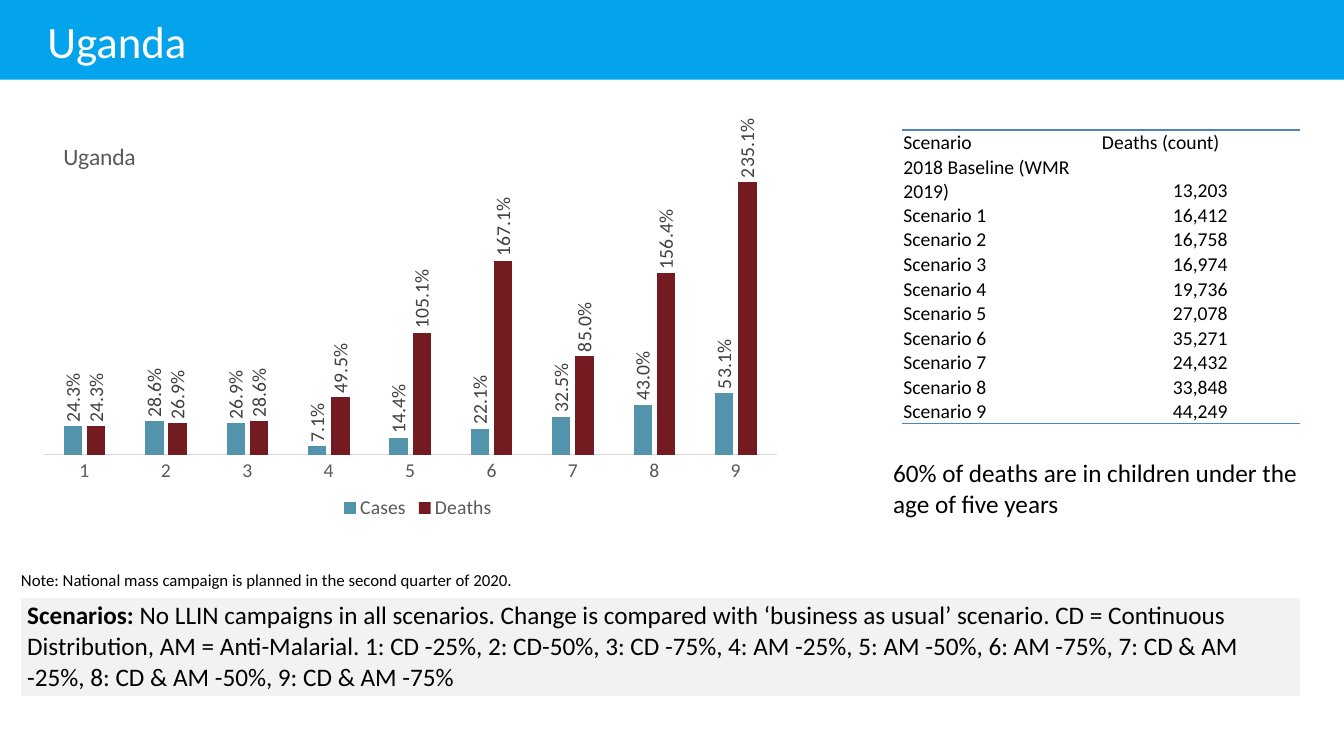
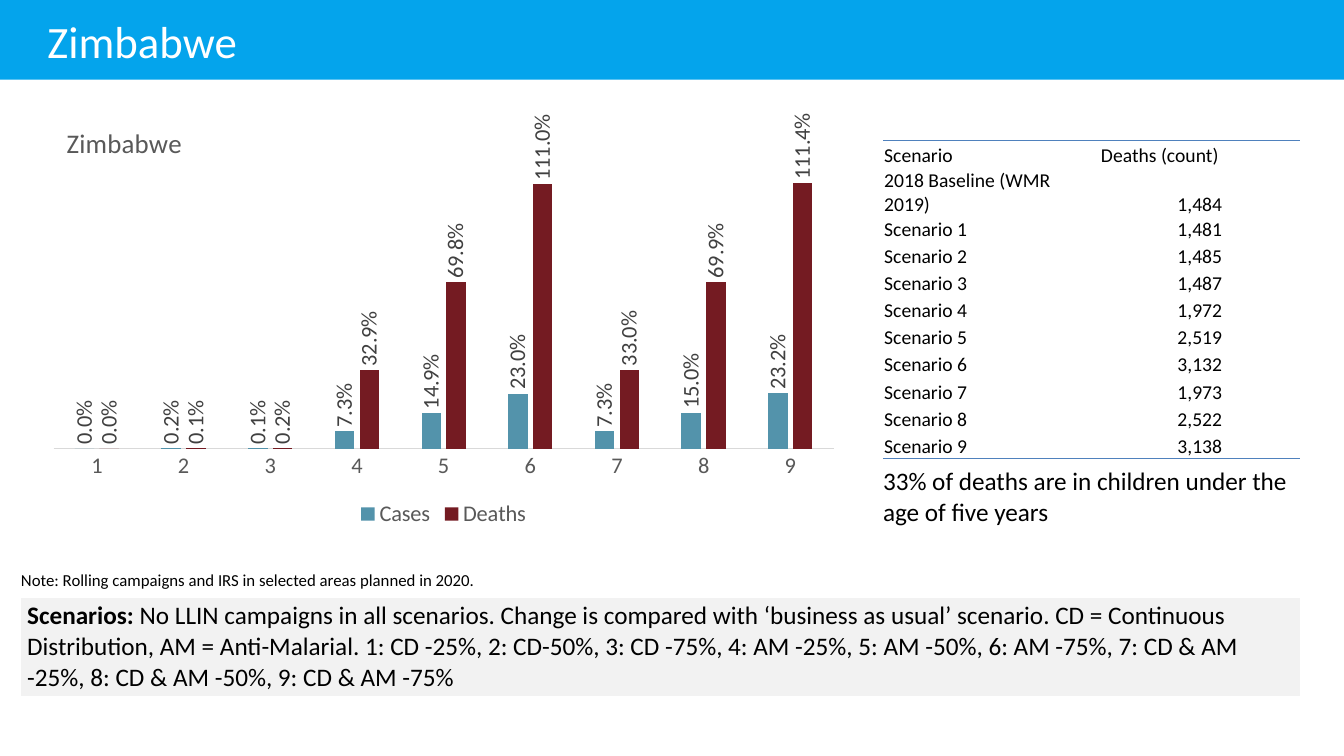
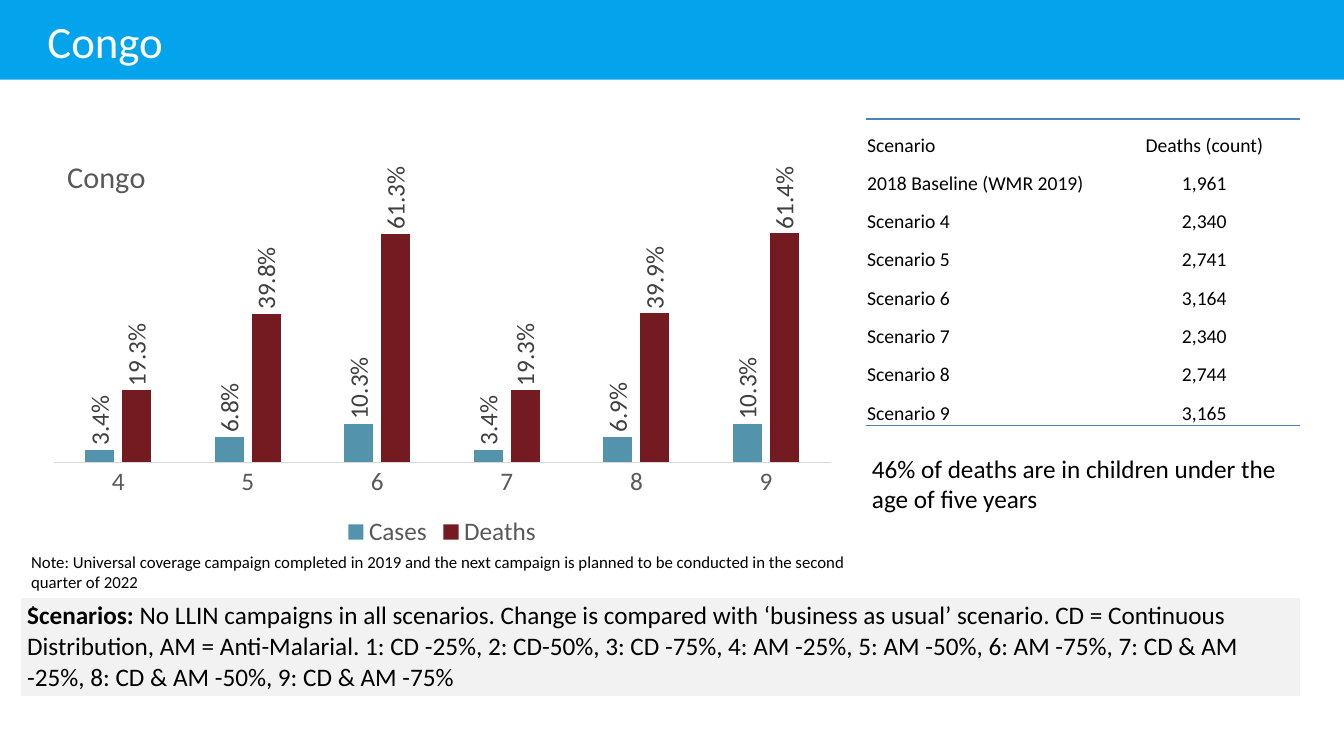
"""Build three country slides comparing malaria scenarios."""
from lxml.etree import SubElement
from pptx import Presentation
from pptx.chart.data import CategoryChartData
from pptx.dml.color import RGBColor
from pptx.enum.chart import XL_CHART_TYPE, XL_LABEL_POSITION, XL_LEGEND_POSITION, XL_TICK_MARK
from pptx.enum.shapes import MSO_SHAPE
from pptx.enum.text import MSO_ANCHOR, PP_ALIGN
from pptx.oxml.ns import qn
from pptx.util import Inches, Pt

BLUE = RGBColor(0x04, 0xA4, 0xEC)
RULE = RGBColor(0x4F, 0x81, 0xBD)
TEAL = RGBColor(0x53, 0x93, 0xAB)
WINE = RGBColor(0x74, 0x1B, 0x22)
PALE = RGBColor(0xF2, 0xF2, 0xF2)
LINE = RGBColor(0xD9, 0xD9, 0xD9)
GREY = RGBColor(0x59, 0x59, 0x59)
DARK = RGBColor(0x40, 0x40, 0x40)
BLACK = RGBColor(0, 0, 0)
WHITE = RGBColor(0xFF, 0xFF, 0xFF)
FONT = "Calibri"
NO_STYLE = "{2D5ABB26-0587-4C30-8999-92F81FD0307C}"
KEY = (
    "No LLIN campaigns in all scenarios. Change is compared with ‘business as usual’ scenario. "
    "CD = Continuous Distribution, AM = Anti-Malarial. 1: CD -25%, 2: CD-50%, 3: CD -75%, "
    "4: AM -25%, 5: AM -50%, 6: AM -75%, 7: CD & AM -25%, 8: CD & AM -50%, 9: CD & AM -75%"
)

LANDS = [
    dict(
        name="Uganda", first=1, size=14, top=2.5,
        chart=(0.36, 1.15, 7.57, 4.05), plot=(0.01, 0.12, 0.96, 0.71), label=(0.6, 1.37),
        cases=[0.243, 0.286, 0.269, 0.071, 0.144, 0.221, 0.325, 0.43, 0.531],
        rise=[0.243, 0.269, 0.286, 0.495, 1.051, 1.671, 0.85, 1.564, 2.351],
        table=(8.95, 1.29), cols=[1.97, 1.97], rows=[0.21] * 11, head=PP_ALIGN.LEFT,
        deaths=["13,203", "16,412", "16,758", "16,974", "19,736", "27,078", "35,271",
                "24,432", "33,848", "44,249"],
        note=["Note: National mass campaign is planned in the second quarter of 2020."],
        place=(0.11, 5.6, 8.32, 0.3),
        share="60%", side=(8.76, 4.49, 4.57, 0.71),
    ),
    dict(
        name="Zimbabwe", first=1, size=16, top=1.2,
        chart=(0.37, 0.92, 8.06, 4.36), plot=(0.02, 0.16, 0.96, 0.65), label=(0.63, 1.16),
        cases=[0, 0.002, 0.001, 0.073, 0.149, 0.23, 0.073, 0.15, 0.232],
        rise=[0, 0.001, 0.002, 0.329, 0.698, 1.11, 0.33, 0.699, 1.114],
        table=(8.76, 1.39), cols=[2.15, 1.98], rows=[0.27, 0.49, 0.21] + [0.27] * 8,
        head=PP_ALIGN.LEFT,
        deaths=["1,484", "1,481", "1,485", "1,487", "1,972", "2,519", "3,132",
                "1,973", "2,522", "3,138"],
        note=["Note: Rolling campaigns and IRS in selected areas planned in 2020."],
        place=(0.11, 5.6, 8.32, 0.3),
        share="33%", side=(8.66, 4.57, 4.57, 0.71),
    ),
    dict(
        name="Congo", first=4, size=18, top=0.7,
        chart=(0.37, 1.23, 8.03, 4.25), plot=(0.02, 0.18, 0.96, 0.61), label=(0.63, 1.48),
        cases=[0.034, 0.068, 0.103, 0.034, 0.069, 0.103],
        rise=[0.193, 0.398, 0.613, 0.193, 0.399, 0.614],
        table=(8.59, 1.18), cols=[2.41, 1.89], rows=[0.38] * 8, head=PP_ALIGN.CENTER,
        deaths=["1,961", "2,340", "2,741", "3,164", "2,340", "2,744", "3,165"],
        note=["Note: Universal coverage campaign completed in 2019 and the next campaign is "
              "planned to be conducted in the second quarter of 2022", "."],
        place=(0.21, 5.42, 8.38, 0.71),
        share="46%", side=(8.55, 4.45, 4.57, 0.71),
    ),
]


def write(para, text, size, color=BLACK, bold=False):
    run = para.add_run()
    run.text = text
    run.font.name, run.font.size, run.font.bold = FONT, Pt(size), bold
    run.font.color.rgb = color


def grid(slide, left, top, cols, rows):
    frame = slide.shapes.add_table(len(rows), len(cols), Inches(left), Inches(top),
                                   Inches(sum(cols)), Inches(sum(rows)))
    table = frame.table
    table.first_row = table.horz_banding = False
    next(frame.element.iter(qn("a:tableStyleId"))).text = NO_STYLE
    for col, width in zip(table.columns, cols):
        col.width = Inches(width)
    for row, height in zip(table.rows, rows):
        row.height = Inches(height)
    return table


deck = Presentation()
deck.slide_width, deck.slide_height = Inches(13.33), Inches(7.5)
layout = deck.slide_layouts[5]
slides = [deck.slides.add_slide(layout) for land in LANDS]

band = slides[0].shapes.add_shape(MSO_SHAPE.RECTANGLE, 0, 0, deck.slide_width, Inches(0.79))
band.shadow.inherit = False
band.fill.solid()
band.fill.fore_color.rgb = BLUE
band.line.fill.background()
next(band.element.iter(qn("p:cNvPr"))).set("id", "20")
layout.shapes.element.insert(2, band.element)

title = layout.placeholders[0]
title.left, title.top, title.width, title.height = map(Inches, (0.37, 0.05, 12, 0.7))
level = SubElement(next(title.element.iter(qn("a:lstStyle"))), qn("a:lvl1pPr"), algn="l")
style = SubElement(level, qn("a:defRPr"), sz="3200")
SubElement(SubElement(style, qn("a:solidFill")), qn("a:srgbClr"), val=str(WHITE))
SubElement(style, qn("a:latin"), typeface=FONT)

for slide, land in zip(slides, LANDS):
    slide.shapes.title.text_frame.paragraphs[0].add_run().text = land["name"]

    cell = grid(slide, 0.21, 5.93, [12.68], [0.7]).cell(0, 0)
    cell.margin_left = cell.margin_right = Inches(0.06)
    cell.margin_top = cell.margin_bottom = Inches(0.03)
    cell.fill.solid()
    cell.fill.fore_color.rgb = PALE
    para = cell.text_frame.paragraphs[0]
    write(para, "Scenarios: ", 18, bold=True)
    write(para, KEY, 18)

    share = [land["share"] + " of deaths are in children under the age of five years"]
    for place, lines, size in ((land["place"], land["note"], 12), (land["side"], share, 18)):
        frame = slide.shapes.add_textbox(*map(Inches, place)).text_frame
        frame.word_wrap = True
        for i, line in enumerate(lines):
            write(frame.add_paragraph() if i else frame.paragraphs[0], line, size)

    cats = [str(land["first"] + i) for i in range(len(land["cases"]))]
    names = ["Scenario", "2018 Baseline (WMR 2019)"] + ["Scenario " + cat for cat in cats]
    counts = ["Deaths (count)"] + land["deaths"]
    table = grid(slide, *land["table"], land["cols"], land["rows"])
    for r, pair in enumerate(zip(names, counts)):
        for c, text in enumerate(pair):
            cell = table.cell(r, c)
            cell.vertical_anchor = MSO_ANCHOR.BOTTOM
            cell.margin_left = cell.margin_right = cell.margin_top = Inches(0.01)
            cell.margin_bottom = 0
            cell.fill.background()
            para = cell.text_frame.paragraphs[0]
            if c:
                para.alignment = PP_ALIGN.CENTER if r else land["head"]
            write(para, text, 14)
            edge = {0: "a:lnT", len(names) - 1: "a:lnB"}.get(r)
            if edge:
                props = cell.fill._xPr
                rule = SubElement(props, qn(edge), w=str(Pt(1)))
                SubElement(SubElement(rule, qn("a:solidFill")), qn("a:srgbClr"), val=str(RULE))
                props.insert(0, rule)

    data = CategoryChartData(number_format="0.0%")
    data.categories = cats
    data.add_series("Cases", land["cases"])
    data.add_series("Deaths", land["rise"])
    left, top, width, height = land["chart"]
    chart = slide.shapes.add_chart(XL_CHART_TYPE.COLUMN_CLUSTERED,
                                   *map(Inches, land["chart"]), data).chart
    size = land["size"]
    chart.font.name, chart.font.size = FONT, Pt(size)
    chart.font.color.rgb = GREY
    chart.has_title = True
    write(chart.chart_title.text_frame.paragraphs[0], land["name"], size * 1.2, GREY)
    chart.has_legend = True
    chart.legend.position = XL_LEGEND_POSITION.BOTTOM
    chart.legend.include_in_layout = False
    axis = chart.category_axis
    axis.major_tick_mark = XL_TICK_MARK.NONE
    axis.format.line.color.rgb = LINE
    axis.format.line.width = Pt(0.75)
    axis = chart.value_axis
    axis.has_major_gridlines = axis.visible = False
    axis.minimum_scale, axis.maximum_scale = 0, land["top"]
    plot = chart.plots[0]
    plot.gap_width, plot.overlap = 219, -27
    plot.vary_by_categories = False
    for series, color in zip(plot.series, (TEAL, WINE)):
        series.format.fill.solid()
        series.format.fill.fore_color.rgb = color
        labels = series.data_labels
        labels.show_value = True
        labels.position = XL_LABEL_POSITION.OUTSIDE_END
        labels.number_format, labels.number_format_is_linked = "0.0%", False
        labels.font.name, labels.font.size = FONT, Pt(size)
        labels.font.color.rgb = DARK
    for labels in chart.element.iter(qn("c:dLbls")):
        for body in labels.iter(qn("a:bodyPr")):
            body.set("rot", "-5400000")
            body.set("vert", "horz")

    x, y = land["label"]
    spot = (round((x - left) / width, 2), round((y - top) / height, 2))
    for tag, index, box in (("c:title", 1, spot), ("c:plotArea", 0, land["plot"])):
        node = next(chart.element.iter(qn(tag)))
        for old in node.findall(qn("c:layout")):
            node.remove(old)
        area = SubElement(node, qn("c:layout"))
        node.insert(index, area)
        area = SubElement(area, qn("c:manualLayout"))
        if tag == "c:plotArea":
            SubElement(area, qn("c:layoutTarget"), val="inner")
        for mode in ("c:xMode", "c:yMode"):
            SubElement(area, qn(mode), val="edge")
        for key, part in zip("xywh", box):
            SubElement(area, qn("c:" + key), val=str(part))

deck.save("out.pptx")
